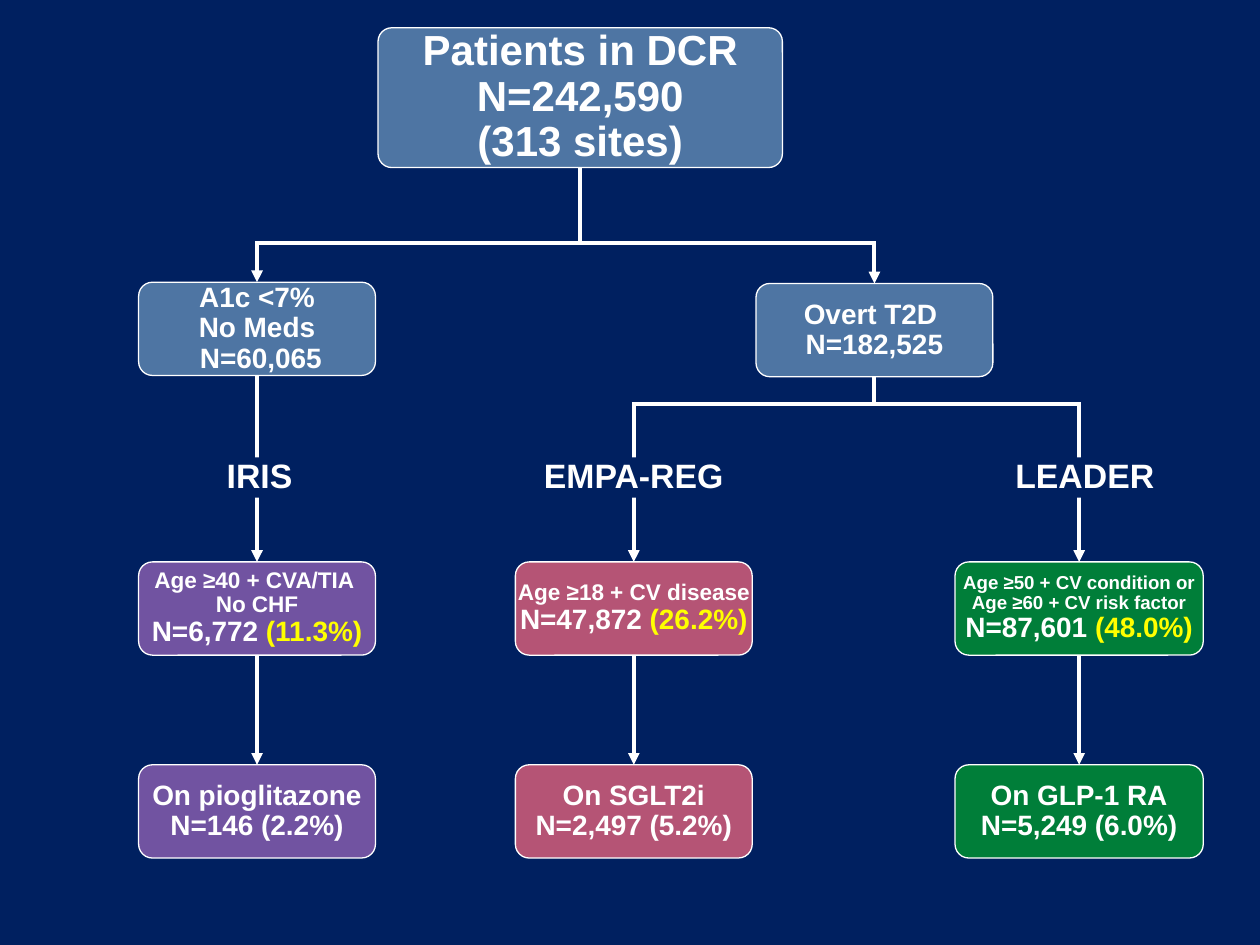
from dataclasses import dataclass

from lxml import etree
from pptx import Presentation, util as u
from pptx.dml.color import RGBColor
from pptx.enum import shapes, text
from pptx.oxml.ns import qn


@dataclass(frozen=True)
class Theme:
    font: str = "Arial"
    navy: str = "002060"
    blue: str = "4E75A3"
    purple: str = "7153A1"
    rose: str = "B55475"
    green: str = "007E39"
    white: str = "FFFFFF"
    yellow: str = "FFFF00"
    root: float = 24
    trial: float = 19.3
    body: float = 16
    criteria: float = 12.9
    criteria_small: float = 10.7
    outline: float = 0.75
    arrow: float = 2.25


T = Theme()
BOX_W, BOX_H, RADIUS = 1.88, 0.74, 0.11
LABEL_TOP, LABEL_H = 3.63, 0.32
CRITERIA_TOP, TREATMENT_TOP = 4.46, 6.07
FORK_1, FORK_2 = 1.93, 3.21
TOP, BOTTOM = 0, 2


def rgb(value):
    return RGBColor.from_string(value)


def add_box(slide, box, fill, lines, outlined=True):
    """Rounded box; each line is a list of (text, size, colour) runs."""
    sp = slide.shapes.add_shape(shapes.MSO_SHAPE.ROUNDED_RECTANGLE,
                                *(u.Inches(v) for v in box))
    sp.adjustments[0] = RADIUS / min(box[2:])
    sp.shadow.inherit = False
    sp.fill.solid()
    sp.fill.fore_color.rgb = rgb(fill)
    if outlined:
        sp.line.color.rgb = rgb(T.white)
        sp.line.width = u.Pt(T.outline)
    else:
        sp.line.fill.background()

    tf = sp.text_frame
    tf.word_wrap = False
    tf.vertical_anchor = text.MSO_ANCHOR.MIDDLE
    tf.margin_left = tf.margin_right = 0
    tf.margin_top = tf.margin_bottom = u.Inches(0.04)
    for i, runs in enumerate(lines):
        p = tf.add_paragraph() if i else tf.paragraphs[0]
        p.alignment = text.PP_ALIGN.CENTER
        p.line_spacing = 0.9
        for words, size, color in runs:
            r = p.add_run()
            r.text = words
            r.font.name, r.font.size, r.font.bold = T.font, u.Pt(size), True
            r.font.color.rgb = rgb(color)
    return sp


def plain(lines, size=T.body):
    return [[(line, size, T.white)] for line in lines]


def add_line(slide, start, end, begin=None, finish=None, arrow=False):
    """Straight line, joined to the bottom of begin and the top of finish."""
    line = slide.shapes.add_connector(
        shapes.MSO_CONNECTOR.STRAIGHT, *(u.Inches(v) for v in (*start, *end)))
    if begin is not None:
        line.begin_connect(begin, BOTTOM)
    if finish is not None:
        line.end_connect(finish, TOP)
    line.line.color.rgb = rgb(T.white)
    line.line.width = u.Pt(T.arrow)
    if arrow:
        etree.SubElement(line.line._get_or_add_ln(), qn("a:tailEnd"), type="triangle")
    etree.SubElement(line._element.spPr, qn("a:effectLst"))


def center(sp):
    return (sp.left + sp.width / 2) / u.Inches(1)


def add_fork(slide, parent, children, y):
    """Stem below the parent, crossbar at y, and an arrow to each child."""
    x = center(parent)
    add_line(slide, (x, y), (x, y), begin=parent)
    xs = [center(child) for child in children]
    overhang = T.arrow / 144
    add_line(slide, (xs[0] - overhang, y), (xs[-1] + overhang, y))
    for child, cx in zip(children, xs):
        add_line(slide, (cx, y), (cx, y), finish=child, arrow=True)


def add_population(slide):
    """Registry box and the two groups it divides into."""
    root = add_box(slide, (3, 0.22, 3.21, 1.11), T.blue,
                   plain(["Patients in DCR", "N=242,590", "(313 sites)"], T.root))
    early = add_box(slide, (1.1, 2.24, BOX_W, BOX_H), T.blue,
                    plain(["A1c <7%", "No Meds", " N=60,065"]))
    overt = add_box(slide, (6, 2.25, BOX_W, BOX_H), T.blue,
                    plain(["Overt T2D ", "N=182,525"]))
    add_fork(slide, root, [early, overt], FORK_1)
    return early, overt


def add_arm(slide, left, width, fill, criteria, size, count, share, treatment):
    """Eligible patients and, below them, those on the treatment."""
    lines = plain(criteria, size)
    lines.append([(count + " ", T.body, T.white), (share, T.body, T.yellow)])
    eligible = add_box(slide, (left, CRITERIA_TOP, width, BOX_H), fill, lines)
    treated = add_box(slide, (left, TREATMENT_TOP, width, BOX_H), fill,
                      plain(treatment))
    add_line(slide, (0, 0), (0, 0), eligible, treated, arrow=True)
    return eligible


def add_trial_label(slide, left, name):
    """Trial name on a background patch that interrupts the arrow."""
    add_box(slide, (left, LABEL_TOP, BOX_W, LABEL_H), T.navy,
            plain([name], T.trial), outlined=False)


def main():
    prs = Presentation()
    prs.slide_width, prs.slide_height = u.Inches(10), u.Inches(7.5)
    slide = prs.slides.add_slide(prs.slide_layouts[6])
    slide.background.fill.solid()
    slide.background.fill.fore_color.rgb = rgb(T.navy)

    # Population
    early, overt = add_population(slide)

    # Trial arms
    iris = add_arm(slide, 1.1, BOX_W, T.purple,
                   ["Age ≥40 + CVA/TIA ", "No CHF"], T.criteria,
                   "N=6,772", "(11.3%)", ["On pioglitazone", "N=146 (2.2%)"])
    empa = add_arm(slide, 4.09, BOX_W, T.rose,
                   ["Age ≥18 + CV disease"], T.criteria,
                   "N=47,872", "(26.2%)", ["On SGLT2i", "N=2,497 (5.2%)"])
    leader = add_arm(slide, 7.58, 1.97, T.green,
                     ["Age ≥50 + CV condition or", "Age ≥60 + CV risk factor"],
                     T.criteria_small,
                     "N=87,601", "(48.0%)", ["On GLP-1 RA", "N=5,249 (6.0%)"])

    # Arrows from groups to arms
    add_line(slide, (0, 0), (0, 0), early, iris, arrow=True)
    add_fork(slide, overt, [empa, leader], FORK_2)

    # Trial names over the arrows
    for left, name in ((1.12, "IRIS"), (4.09, "EMPA-REG"), (7.67, "LEADER")):
        add_trial_label(slide, left, name)

    prs.save("out.pptx")


if __name__ == "__main__":
    main()
